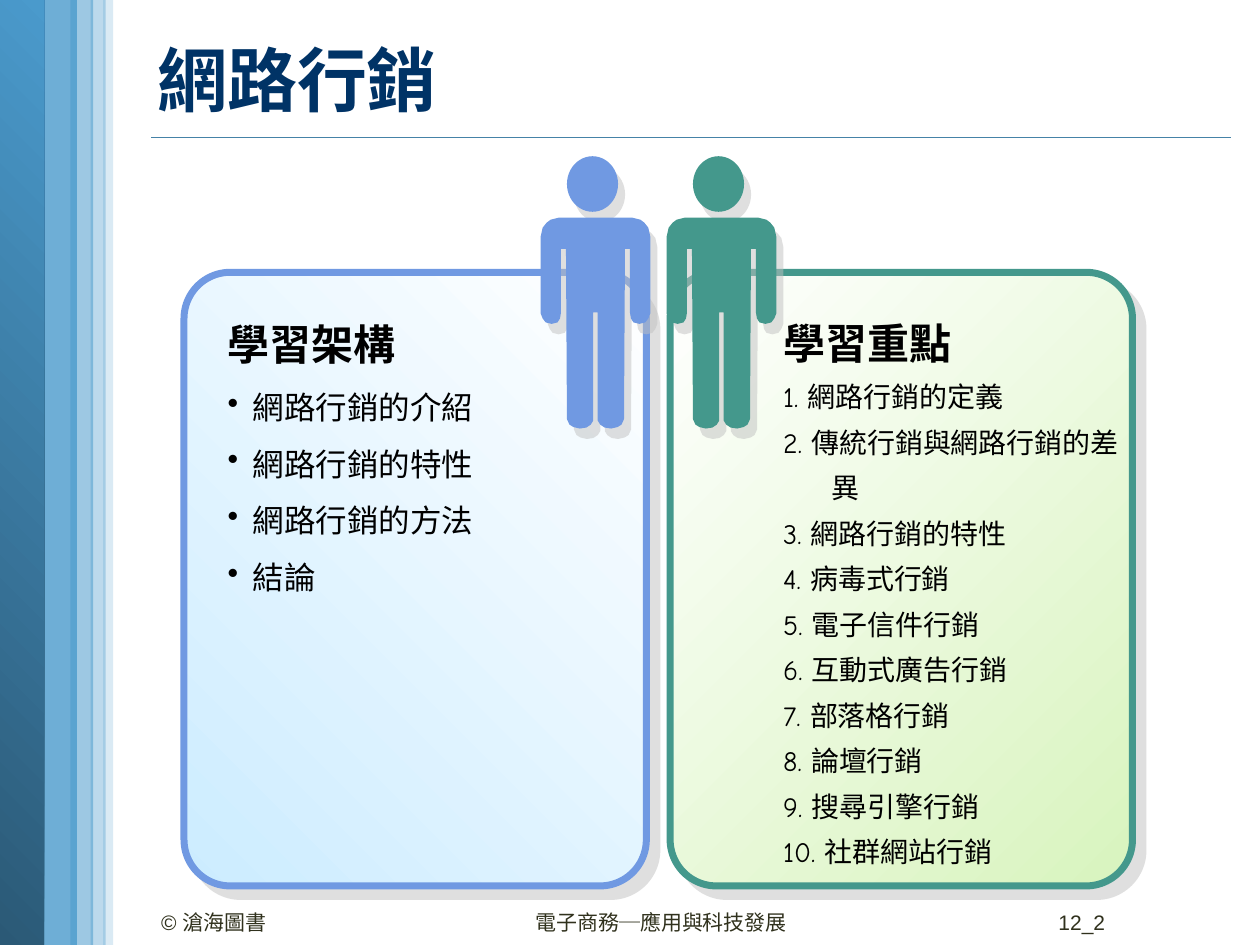
from dataclasses import dataclass

from lxml.etree import SubElement
from pptx import Presentation
from pptx.dml.color import RGBColor
from pptx.enum.shapes import MSO_CONNECTOR, MSO_SHAPE
from pptx.enum.text import MSO_ANCHOR, PP_ALIGN
from pptx.oxml.ns import qn
from pptx.util import Cm, Pt


@dataclass(frozen=True)
class Theme:
    font: str = "Comic Neue"
    footer_font: str = "Arial"
    title: str = "003366"
    text: str = "000000"
    footer: str = "30311D"
    rule: str = "4582A7"
    stripe: str = "4A9ACC"
    stripe_dark: str = "2B5976"
    shadow: str = "C0C0C0"
    title_size: int = 40
    heading_size: int = 24
    footer_size: int = 12


THEME = Theme()

# Content; all lengths are in centimetres
TITLE = "網路行銷"
PANELS = [
    {
        "heading": "學習架構",
        "items": ["網路行銷的介紹", "網路行銷的特性", "網路行銷的方法", "結論"],
        "numbered": False, "size": 18, "indent": 0.51, "spacing": 1.5,
        "box": (4.34, 5.79, 7.87, 6.4),
        "accent": "7099E2", "gradient": ("CCECFF", "FFFFFF", 45),
    },
    {
        "heading": "學習重點",
        "items": ["網路行銷的定義", "傳統行銷與網路行銷的差異", "網路行銷的特性",
                  "病毒式行銷", "電子信件行銷", "互動式廣告行銷", "部落格行銷",
                  "論壇行銷", "搜尋引擎行銷", "社群網站行銷"],
        "numbered": True, "size": 16, "indent": 0.97, "spacing": Pt(26),
        "box": (15.54, 5.77, 7.44, 11.99),
        "accent": "44988C", "gradient": ("FFFFFF", "D8F4BE", 315),
    },
]
FOOTERS = [  # text, left, width, alignment
    ("© 滄海圖書", 3.0, 5.92, PP_ALIGN.LEFT),
    ("電子商務─應用與科技發展", 10.54, 5.99, PP_ALIGN.LEFT),
    ("12_2", 20.7, 1.83, PP_ALIGN.RIGHT),
]
STRIPES = [  # left, width, opacity in percent (None: gradient)
    (0.76, 0.79, 80), (-0.03, 0.92, None), (2.08, 0.2, 20),
    (1.42, 0.46, 54), (1.83, 0.3, 37),
]

# Layout
PANEL_LEFT, PANEL_TOP, PANEL_WIDTH, PANEL_HEIGHT, PANEL_PITCH = 3.71, 5.49, 9.32, 12.37, 9.8
FIGURE_LEFT, FIGURE_PITCH, HEAD_TOP, BODY_TOP = 10.9, 2.54, 3.15, 4.39
HEAD_WIDTH, HEAD_HEIGHT, BODY_WIDTH = 1.03, 1.12, 2.21
# Left half of the body: shoulder, arm, leg, crotch
HALF_BODY = [
    (0.36, 0), (0.2, 0.04), (0.12, 0.1), (0.04, 0.2), (0, 0.38),
    (0, 1.93), (0.04, 2.03), (0.1, 2.11), (0.22, 2.14), (0.34, 2.11),
    (0.39, 2.03), (0.41, 1.91), (0.41, 0.63), (0.51, 0.63),
    (0.53, 4.06), (0.58, 4.17), (0.66, 4.22), (0.79, 4.25), (0.92, 4.23),
    (1.01, 4.17), (1.06, 4.09), (1.06, 1.91),
]


def color(value):
    return RGBColor.from_string(value)


def fill_solid(shape, value):
    shape.fill.solid()
    shape.fill.fore_color.rgb = color(value)


def fill_gradient(shape, start, end, angle):
    shape.fill.gradient()
    shape.fill.gradient_angle = angle
    for stop, value, position in zip(shape.fill.gradient_stops, (start, end), (0, 1)):
        stop.color.rgb = color(value)
        stop.position = position


def add_alpha(color_element, percent):
    SubElement(color_element, qn("a:alpha"), val=str(percent * 1000))


def add_shadow(shape, distance, degrees):
    shape.shadow.inherit = False
    effects = shape._element.spPr.find(qn("a:effectLst"))
    shadow = SubElement(effects, qn("a:outerShdw"), dist=str(int(Pt(distance))),
                        dir=str(degrees * 60000), algn="ctr", rotWithShape="0")
    add_alpha(SubElement(shadow, qn("a:srgbClr"), val=THEME.shadow), 50)


def add_preset(slide, kind, *box):
    shape = slide.shapes.add_shape(kind, *map(Cm, box))
    shape.shadow.inherit = False
    shape.line.fill.background()
    return shape


def add_text_box(slide, box, anchor=MSO_ANCHOR.TOP):
    frame = slide.shapes.add_textbox(*map(Cm, box)).text_frame
    frame.word_wrap = True
    frame.vertical_anchor = anchor
    return frame


def style(paragraph, size, value, font=THEME.font, bold=False):
    paragraph.font.size = Pt(size)
    paragraph.font.name = font
    paragraph.font.bold = bold
    paragraph.font.color.rgb = color(value)


def add_figure(slide, left, accent):
    head = add_preset(slide, MSO_SHAPE.OVAL, left + (BODY_WIDTH - HEAD_WIDTH) / 2 - 0.06,
                      HEAD_TOP, HEAD_WIDTH, HEAD_HEIGHT)
    outline = HALF_BODY + [(BODY_WIDTH - x, y) for x, y in reversed(HALF_BODY)]
    points = [(round(x * 100), round(y * 100)) for x, y in outline]
    builder = slide.shapes.build_freeform(*points[0], scale=Cm(0.01))
    builder.add_line_segments(points[1:], close=True)
    body = builder.convert_to_shape(Cm(left), Cm(BODY_TOP))
    body.line.fill.background()
    for part in (head, body):
        fill_solid(part, accent)
        add_shadow(part, 7.2, 56)


def add_panel_text(slide, panel):
    frame = add_text_box(slide, panel["box"])
    heading = frame.paragraphs[0]
    heading.text = panel["heading"]
    heading.line_spacing = 1.5
    style(heading, THEME.heading_size, THEME.text, bold=True)
    for number, item in enumerate(panel["items"], 1):
        paragraph = frame.add_paragraph()
        paragraph.text = f"{number}. {item}" if panel["numbered"] else item
        paragraph.line_spacing = panel["spacing"]
        properties = paragraph._p.get_or_add_pPr()
        properties.set("marL", str(Cm(panel["indent"])))
        properties.set("indent", str(-Cm(panel["indent"])))
        if not panel["numbered"]:
            SubElement(properties, qn("a:buChar"), char="•")
        style(paragraph, panel["size"], THEME.text)


def main():
    presentation = Presentation()
    presentation.slide_width, presentation.slide_height = Cm(25.4), Cm(19.05)
    slide = presentation.slides.add_slide(presentation.slide_layouts[6])

    # Rule under the title
    rule = slide.shapes.add_connector(MSO_CONNECTOR.STRAIGHT, Cm(3.05), Cm(2.77), Cm(24.82), Cm(2.77))
    rule.line.color.rgb = color(THEME.rule)
    rule.line.width = Pt(1)
    SubElement(rule._element.spPr, qn("a:effectLst"))

    # Stripes on the left edge
    for left, width, opacity in STRIPES:
        stripe = add_preset(slide, MSO_SHAPE.RECTANGLE, left, 0, width, 19.05)
        if opacity is None:
            fill_gradient(stripe, THEME.stripe_dark, THEME.stripe, 45)
        else:
            fill_solid(stripe, THEME.stripe)
            add_alpha(stripe._element.spPr.find(".//" + qn("a:srgbClr")), opacity)

    # Title
    title = add_text_box(slide, (2.92, 0.18, 22.1, 2.82), MSO_ANCHOR.MIDDLE).paragraphs[0]
    title.text = TITLE
    style(title, THEME.title_size, THEME.title, bold=True)

    # Panels, each with its figure and list
    for index, panel in enumerate(PANELS):
        card = add_preset(slide, MSO_SHAPE.ROUNDED_RECTANGLE, PANEL_LEFT + index * PANEL_PITCH,
                          PANEL_TOP, PANEL_WIDTH, PANEL_HEIGHT)
        card.adjustments[0] = 0.1
        fill_gradient(card, *panel["gradient"])
        card.line.color.rgb = color(panel["accent"])
        card.line.width = Pt(4)
        add_shadow(card, 8.5, 45)
        add_figure(slide, FIGURE_LEFT + index * FIGURE_PITCH, panel["accent"])
        add_panel_text(slide, panel)

    # Footer
    for text, left, width, alignment in FOOTERS:
        paragraph = add_text_box(slide, (left, 18.21, width, 0.66)).paragraphs[0]
        paragraph.text = text
        paragraph.alignment = alignment
        style(paragraph, THEME.footer_size, THEME.footer, THEME.footer_font)

    presentation.save("out.pptx")


if __name__ == "__main__":
    main()
